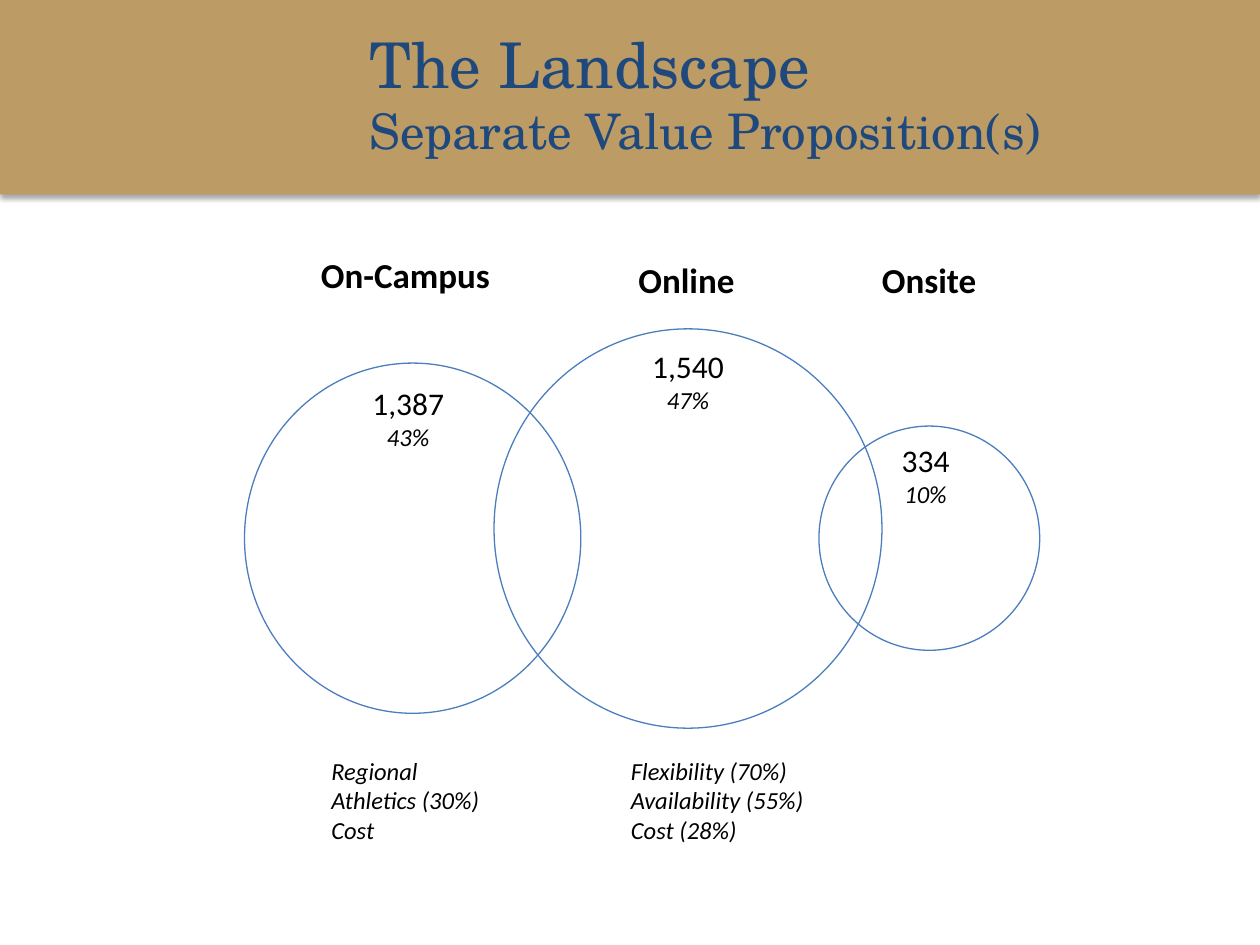
"""Build the slide on the separate value propositions of three audiences."""
from lxml.etree import SubElement
from pptx import Presentation
from pptx.dml.color import RGBColor
from pptx.enum.shapes import MSO_SHAPE as Preset
from pptx.enum.text import MSO_ANCHOR as Anchor, MSO_AUTO_SIZE as AutoSize, PP_ALIGN as Align
from pptx.oxml.ns import qn
from pptx.util import Cm, Pt

COLORS = {
    "band": "BC9B65",
    "title": "1F497D",
    "circle": "4B7EBC",
    "text": "000000",
    "shadow": "000000",
}
TITLE_FONT = "TeX Gyre Schola"
BODY_FONT = "Calibri"

CIRCLES = [
    (4.93, 7.32, 6.78, 7.06),
    (16.51, 8.59, 4.45, 4.52),
    (9.96, 6.63, 7.82, 8.05),
]
HEADINGS = [
    ("On-Campus", 6.22, 4.98, 3.96),
    ("Online", 12.62, 5.08, 2.46),
    ("Onsite", 17.53, 5.08, 2.44),
]
COUNTS = [
    ("1,387", "43%", 7.24, 7.62, 1.98),
    ("1,540", "47%", 12.88, 6.88, 1.98),
    ("334", "10%", 17.91, 8.76, 1.5),
]
REASONS = [
    (["Regional", "Athletics (30%)", "Cost"], 6.43, 3.53),
    (["Flexibility (70%)", "Availability (55%)", "Cost (28%)"], 12.47, 4.04),
]


def color(name):
    """Return the named colour."""
    return RGBColor.from_string(COLORS[name])


def write_lines(frame, lines, font_name, color_name, align=Align.LEFT):
    """Write one paragraph for each (text, size, bold, italic) line."""
    for index, (text, size, bold, italic) in enumerate(lines):
        paragraph = frame.add_paragraph() if index else frame.paragraphs[0]
        paragraph.text = text
        paragraph.alignment = align
        font = paragraph.font
        font.name, font.size = font_name, Pt(size)
        font.bold, font.italic = bold, italic
        font.color.rgb = color(color_name)


def add_title(slide):
    """Fill and place the two-line title."""
    title = slide.shapes.title
    title.left, title.top, title.width, title.height = Cm(7.19), Cm(0.41), Cm(17.58), Cm(2.9)
    frame = title.text_frame
    frame.auto_size = AutoSize.NONE
    frame.vertical_anchor = Anchor.MIDDLE
    lines = [
        ("The Landscape", 36, False, False),
        ("Separate Value Proposition(s)", 28, False, False),
    ]
    write_lines(frame, lines, TITLE_FONT, "title")


def add_band(slide):
    """Add the header band with its soft shadow behind the title."""
    band = slide.shapes.add_shape(Preset.RECTANGLE, 0, Cm(-0.02), Cm(25.4), Cm(3.94))
    band.fill.solid()
    band.fill.fore_color.rgb = color("band")
    band.line.fill.background()
    band.shadow.inherit = False
    effects = band.element.spPr.find(qn("a:effectLst"))
    shadow = SubElement(effects, qn("a:outerShdw"), blurRad=str(Pt(3.1)),
                        dist=str(Pt(1.8)), dir="5400000", rotWithShape="0")
    tint = SubElement(shadow, qn("a:srgbClr"), val=COLORS["shadow"])
    SubElement(tint, qn("a:alpha"), val="35000")
    slide.shapes.title.element.addprevious(band.element)


def add_circle(slide, left, top, width, height):
    """Add one unfilled, thinly outlined circle."""
    circle = slide.shapes.add_shape(Preset.OVAL, Cm(left), Cm(top), Cm(width), Cm(height))
    circle.shadow.inherit = False
    circle.fill.background()
    circle.line.color.rgb = color("circle")
    circle.line.width = Pt(0.75)


def add_label(slide, lines, left, top, width, height, align=Align.LEFT):
    """Add an unwrapped text box that fits its lines."""
    box = slide.shapes.add_textbox(Cm(left), Cm(top), Cm(width), Cm(height))
    frame = box.text_frame
    frame.word_wrap = False
    frame.auto_size = AutoSize.SHAPE_TO_FIT_TEXT
    write_lines(frame, lines, BODY_FONT, "text", align)


def main():
    """Build and save the presentation."""
    presentation = Presentation()
    presentation.slide_width, presentation.slide_height = Cm(25.4), Cm(19.05)
    slide = presentation.slides.add_slide(presentation.slide_layouts[5])
    add_title(slide)
    add_band(slide)
    for circle in CIRCLES:
        add_circle(slide, *circle)
    for text, left, top, width in HEADINGS:
        add_label(slide, [(text, 20, True, False)], left, top, width, 1.12)
    for count, share, left, top, width in COUNTS:
        lines = [(count, 18, False, False), (share, 14, False, True)]
        add_label(slide, lines, left, top, width, 1.63, Align.CENTER)
    for reasons, left, width in REASONS:
        lines = [(reason, 14, False, True) for reason in reasons]
        add_label(slide, lines, left, 15.11, width, 2.06)
    presentation.save("out.pptx")


if __name__ == "__main__":
    main()
